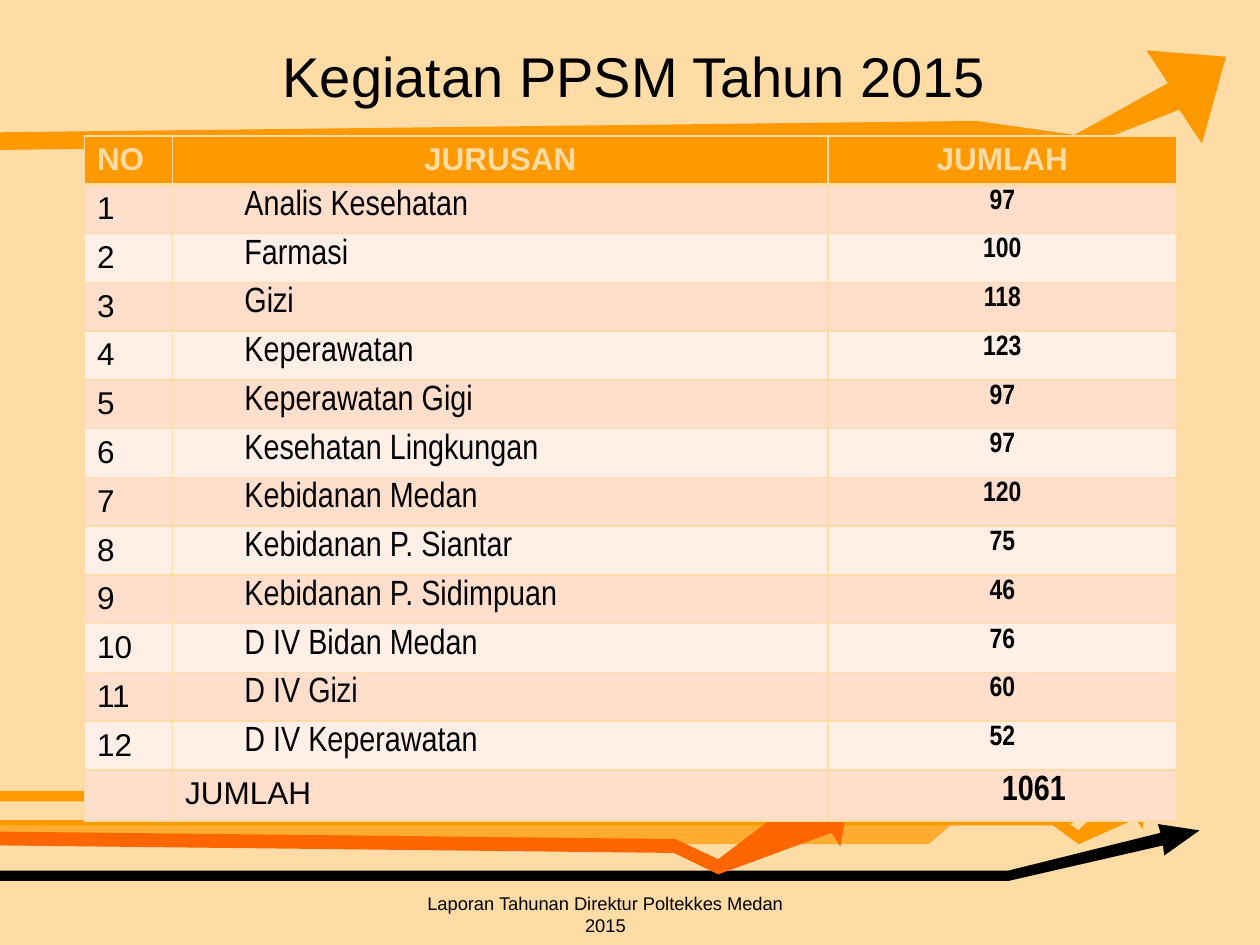
from dataclasses import dataclass

from lxml import etree
from pptx import Presentation
from pptx.dml.color import RGBColor
from pptx.enum.text import MSO_ANCHOR, MSO_AUTO_SIZE, PP_ALIGN
from pptx.oxml.ns import qn
from pptx.slide import Slide
from pptx.util import Inches, Pt

LEFT, CENTER, JUSTIFY = PP_ALIGN.LEFT, PP_ALIGN.CENTER, PP_ALIGN.JUSTIFY
MIDDLE, TOP = MSO_ANCHOR.MIDDLE, MSO_ANCHOR.TOP
NO_AUTOFIT = MSO_AUTO_SIZE.NONE
TITLE_ONLY = 5

COLORS = {
    "sand": "FFDBA6",
    "amber": "FFAC31",
    "orange": "FF9900",
    "red": "FF6600",
    "black": "000000",
    "band_dark": "FFDECC",
    "band_light": "FFEFE7",
}

ARROWS = [
    ("amber", [(0, 6.53), (7.36, 6.53), (7.96, 5.9), (8.43, 5.89), (8.45, 5.64), (9.01, 6.06),
               (8.39, 6.43), (8.41, 6.2), (8.03, 6.13), (7.37, 6.7), (0, 6.7)]),
    ("orange", [(0, 6.51), (8.47, 6.51), (8.6, 6.39), (8.58, 6.36), (8.7, 6.36), (8.69, 6.5),
                (8.66, 6.46), (8.67, 6.46), (8.47, 6.55), (0, 6.55)]),
    ("orange", [(0, 6.28), (8.11, 6.28), (8.56, 6.59), (8.85, 6.31), (8.78, 6.24), (9.09, 6.25),
                (9.07, 6.58), (9.01, 6.5), (8.56, 6.7), (8.1, 6.36), (0, 6.36)]),
    ("black", [(0, 6.91), (8, 6.91), (9.21, 6.61), (9.19, 6.54), (9.52, 6.59), (9.24, 6.79),
               (9.23, 6.71), (8.01, 6.99), (0, 6.99)]),
    ("red", [(-0.05, 6.71), (5.35, 6.77), (5.7, 6.94), (6.6, 6.61), (6.67, 6.72), (6.76, 6.2),
             (6.29, 6.11), (6.4, 6.29), (5.7, 6.82), (5.36, 6.66), (-0.08, 6.6)]),
    ("orange", [(0, 1.19), (7.72, 1.09), (8.54, 1.19), (9.36, 0.87), (9.54, 1.14), (9.73, 0.45),
                (9.1, 0.4), (9.27, 0.66), (8.53, 1.07), (7.75, 0.96), (0, 1.05)]),
]

HEADINGS = ["NO", "JURUSAN", "JUMLAH"]
DEPARTMENTS = [
    ("Analis Kesehatan", 97),
    ("Farmasi", 100),
    ("Gizi", 118),
    ("Keperawatan", 123),
    ("Keperawatan Gigi", 97),
    ("Kesehatan Lingkungan", 97),
    ("Kebidanan Medan", 120),
    ("Kebidanan P. Siantar", 75),
    ("Kebidanan P. Sidimpuan", 46),
    ("D IV Bidan Medan", 76),
    ("D IV Gizi", 60),
    ("D IV Keperawatan", 52),
]
COLUMN_WIDTHS = [0.7, 5.2, 2.77]
TABLE_HEIGHT = 5.42


@dataclass
class SlideBuilder:
    slide: Slide
    font: str = "Arial"
    narrow_font: str = "Arial Narrow"

    def color(self, name):
        return RGBColor.from_string(COLORS[name])

    def background(self, color):
        fill = self.slide.background.fill
        fill.solid()
        fill.fore_color.rgb = self.color(color)

    def arrow(self, color, points):
        corners = [(Inches(x), Inches(y)) for x, y in points]
        builder = self.slide.shapes.build_freeform(*corners[0])
        builder.add_line_segments(corners[1:], close=True)
        arrow = builder.convert_to_shape()
        arrow.shadow.inherit = False
        arrow.fill.solid()
        arrow.fill.fore_color.rgb = self.color(color)
        arrow.line.fill.background()

    def set_text(self, frame, text, size, align=LEFT, color="black", bold=False, font=None):
        frame.text = text
        paragraph = frame.paragraphs[0]
        paragraph.alignment = align
        for run in paragraph.runs:
            run.font.size = Pt(size)
            run.font.name = font or self.font
            run.font.bold = bold
            run.font.color.rgb = self.color(color)
        return paragraph

    def place_text(self, shape, box, text, size, anchor):
        shape.left, shape.top, shape.width, shape.height = (Inches(v) for v in box)
        frame = shape.text_frame
        frame.word_wrap = True
        frame.auto_size = NO_AUTOFIT
        frame.vertical_anchor = anchor
        self.set_text(frame, text, size, CENTER)

    def title(self, text, box):
        title = self.slide.shapes.title
        self.slide.shapes.element.append(title.element)
        self.place_text(title, box, text, 32, MIDDLE)

    def footer(self, text, box):
        textbox = self.slide.shapes.add_textbox(*(Inches(v) for v in box))
        self.place_text(textbox, box, text, 10.5, TOP)

    def table(self, left, top, row_count):
        width, height = Inches(sum(COLUMN_WIDTHS)), Inches(TABLE_HEIGHT)
        frame = self.slide.shapes.add_table(
            row_count, len(COLUMN_WIDTHS), Inches(left), Inches(top), width, height)
        for column, column_width in zip(frame.table.columns, COLUMN_WIDTHS):
            column.width = Inches(column_width)
        return frame.table

    def cell(self, cell, fill, bottom_border=1):
        properties = cell._tc.get_or_add_tcPr()
        for side, width in (("L", 1), ("R", 1), ("T", 1), ("B", bottom_border)):
            line = etree.SubElement(properties, qn(f"a:ln{side}"), w=str(Pt(width)))
            solid = etree.SubElement(line, qn("a:solidFill"))
            etree.SubElement(solid, qn("a:srgbClr"), val=COLORS["sand"])
        cell.fill.solid()
        cell.fill.fore_color.rgb = self.color(fill)

    def narrow_cell(self, cell, text, size, align, bold=False, indent=0):
        cell.margin_left = cell.margin_right = Inches(0.07)
        cell.margin_top = cell.margin_bottom = 0
        paragraph = self.set_text(cell.text_frame, text, size, align, bold=bold,
                                  font=self.narrow_font)
        paragraph.line_spacing = 1.15
        if indent:
            paragraph._p.get_or_add_pPr().set("marL", str(Inches(indent)))


def fill_table(builder, table):
    for column, heading in enumerate(HEADINGS):
        cell = table.cell(0, column)
        builder.cell(cell, "orange", bottom_border=3)
        builder.set_text(cell.text_frame, heading, 18, CENTER if column else LEFT, "sand", True)

    total_row = len(DEPARTMENTS) + 1
    for row in range(1, total_row + 1):
        for column in range(len(HEADINGS)):
            builder.cell(table.cell(row, column), "band_dark" if row % 2 else "band_light")

    for row, (department, count) in enumerate(DEPARTMENTS, start=1):
        builder.set_text(table.cell(row, 0).text_frame, str(row), 18)
        builder.narrow_cell(table.cell(row, 1), department, 20, JUSTIFY, indent=0.5)
        builder.narrow_cell(table.cell(row, 2), str(count), 16, CENTER, bold=True)

    total = sum(count for _, count in DEPARTMENTS)
    builder.set_text(table.cell(total_row, 1).text_frame, "JUMLAH", 18)
    builder.narrow_cell(table.cell(total_row, 2), str(total), 20, CENTER, bold=True, indent=0.5)


def main():
    presentation = Presentation()
    presentation.slide_width, presentation.slide_height = Inches(10), Inches(7.5)
    builder = SlideBuilder(presentation.slides.add_slide(presentation.slide_layouts[TITLE_ONLY]))
    builder.background("sand")
    for color, points in ARROWS:
        builder.arrow(color, points)
    builder.title("Kegiatan PPSM Tahun 2015", (0.5, 0.28, 9.07, 0.63))
    fill_table(builder, builder.table(0.67, 1.08, len(DEPARTMENTS) + 2))
    builder.footer("Laporan Tahunan Direktur Poltekkes Medan 2015", (3.22, 7.03, 3.17, 0.31))
    presentation.save("out.pptx")


if __name__ == "__main__":
    main()
